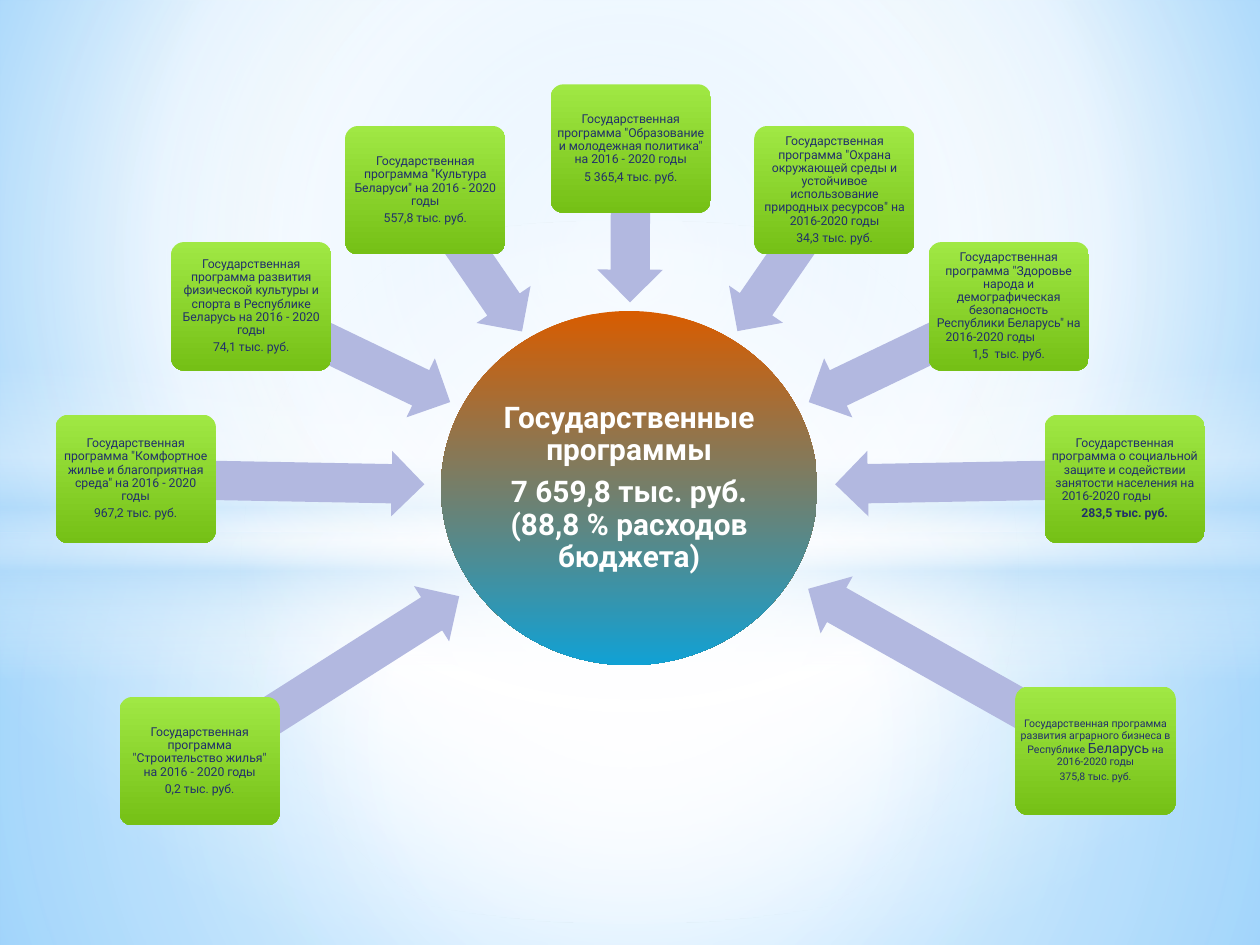
import math
from lxml import etree
from pptx import Presentation
from pptx import util as u
from pptx.dml import color
from pptx.enum import shapes, text
from pptx.oxml import ns

Cm, Pt = u.Cm, u.Pt
HUE = {
    "white": "FFFFFF", "sky": "9ED5FF", "deep": "5BB9FF", "haze": "B4DCFA",
    "rust": "D85C00", "sea": "11A1D4", "lime": "A0E844", "leaf": "75C016",
    "lilac": "B2B8E0", "navy": "21306A",
}
MID = (50, 50, 50, 50)


def blend(fill, root, stops, focus=None):
    fill.gradient()
    grad = root.find(".//" + ns.qn("a:gradFill"))
    for kid in list(grad):
        grad.remove(kid)
    band = etree.SubElement(grad, ns.qn("a:gsLst"))
    for pos, hue, alpha in stops:
        stop = etree.SubElement(band, ns.qn("a:gs"), {"pos": str(pos * 1000)})
        tint = etree.SubElement(stop, ns.qn("a:srgbClr"), {"val": HUE[hue]})
        if alpha < 100:
            etree.SubElement(tint, ns.qn("a:alpha"), {"val": str(alpha * 1000)})
    if focus:
        ring = etree.SubElement(grad, ns.qn("a:path"), {"path": "circle"})
        sides = {side: str(val * 1000) for side, val in zip("ltrb", focus)}
        etree.SubElement(ring, ns.qn("a:fillToRect"), sides)
    else:
        etree.SubElement(grad, ns.qn("a:lin"), {"ang": "5400000", "scaled": "0"})


def draw(kind, x, y, w, h, stops, focus=None, words=(), size=7, hue="navy", bold=(False, False)):
    form = slide.shapes.add_shape(kind, Cm(x), Cm(y), Cm(w), Cm(h))
    form.shadow.inherit = False
    form.line.fill.background()
    blend(form.fill, form._element, stops, focus)
    frame = form.text_frame
    frame.vertical_anchor = text.MSO_ANCHOR.MIDDLE
    frame.margin_left = frame.margin_right = frame.margin_top = frame.margin_bottom = Cm(0.03)
    for i, line in enumerate(words):
        para = frame.add_paragraph() if i else frame.paragraphs[0]
        para.alignment = text.PP_ALIGN.CENTER
        para.line_spacing = 0.9
        para.space_after = Pt(round(size * 0.35, 2))
        para.font.name, para.font.size, para.font.bold = "Roboto", Pt(size), bold[i]
        para.font.color.rgb = color.RGBColor.from_string(HUE[hue])
        for j, part in enumerate(line.split("|")):
            run = para.add_run()
            run.text = part
            if j == 1:
                run.font.size = Pt(8)
    return form


deck = Presentation()
deck.slide_width, deck.slide_height = Cm(25.4), Cm(19.05)
slide = deck.slides.add_slide(deck.slide_layouts[6])
blend(slide.background.fill, slide._element,
      [(0, "sky", 100), (60, "white", 100), (100, "deep", 100)], (20, 10, 20, 60))

RECT, OVAL = shapes.MSO_SHAPE.RECTANGLE, shapes.MSO_SHAPE.OVAL
draw(RECT, 0, 10.74, 25.4, 8.31, [(0, "white", 91), (37, "white", 76), (100, "haze", 79)], MID)
draw(RECT, 0, 0, 25.4, 10.74, [(0, "white", 89), (48, "white", 62), (100, "haze", 79)], MID)
draw(RECT, 0, 7.37, 25.4, 6.35, [(0, "white", 0), (29, "white", 30), (45, "haze", 40),
                                 (55, "white", 26), (65, "haze", 60), (100, "white", 0)])
draw(OVAL, 0, 4.45, 25.4, 14.17, [(0, "white", 100), (54, "white", 0)], MID)

left, top, wide, high = 8.89, 6.27, 7.59, 7.14
draw(OVAL, left, top, wide, high, [(0, "rust", 100), (100, "sea", 100)],
     words=("Государственные программы", "7 659,8 тыс. руб. (88,8 % расходов бюджета)"),
     size=17, hue="white", bold=(True, True))
hub_x, hub_y = left + wide / 2, top + high / 2

items = [
    (2.41, 14.05, 6.2, 'Государственная программа "Строительство жилья" на 2016 - 2020 годы',
     "0,2 тыс. руб.", 7, False),
    (1.12, 8.36, 5.82, 'Государственная программа "Комфортное жилье и благоприятная среда" на 2016 - 2020 годы',
     "967,2 тыс. руб.", 7, False),
    (3.45, 4.88, 4.45, "Государственная программа развития физической культуры и спорта "
     "в Республике Беларусь на 2016 - 2020 годы", "74,1 тыс. руб.", 7, False),
    (6.96, 2.54, 3.45, 'Государственная программа "Культура Беларуси" на 2016 - 2020 годы',
     "557,8 тыс. руб.", 7, False),
    (11.1, 1.7, 3.1, 'Государственная программа "Образование и молодежная политика" на 2016 - 2020 годы',
     "5 365,4 тыс. руб.", 7, False),
    (15.21, 2.54, 3.45, 'Государственная программа "Охрана окружающей среды и устойчивое '
     'использование природных ресурсов" на 2016-2020 годы', "34,3 тыс. руб.", 7, False),
    (18.72, 4.88, 4.47, 'Государственная программа "Здоровье народа и демографическая '
     'безопасность Республики Беларусь" на 2016-2020 годы\t', "1,5  тыс. руб.", 7, False),
    (21.06, 8.36, 5.84, "Государственная программа о социальной защите и содействии "
     "занятости населения на 2016-2020 годы\t", "283,5 тыс. руб.", 7, True),
    (20.47, 13.84, 6.65, "Государственная программа развития аграрного бизнеса "
     "в Республике |Беларусь| на 2016-2020 годы", "375,8 тыс. руб.", 6, False),
]
box_w, box_h, thick = 3.23, 2.59, 1.32
for x, y, span, name, cost, size, bold in items:
    tail_x, tail_y = x + box_w / 2, y + box_h / 2
    turn = math.atan2(hub_y - tail_y, hub_x - tail_x)
    mid_x = tail_x + span / 2 * math.cos(turn)
    mid_y = tail_y + span / 2 * math.sin(turn)
    arrow = slide.shapes.add_shape(shapes.MSO_SHAPE.LEFT_ARROW, Cm(mid_x - span / 2),
                                   Cm(mid_y - thick / 2), Cm(span), Cm(thick))
    arrow.rotation = (math.degrees(turn) + 180) % 360
    arrow.adjustments[0], arrow.adjustments[1] = 0.6, 0.5
    arrow.shadow.inherit = False
    arrow.line.fill.background()
    arrow.fill.solid()
    arrow.fill.fore_color.rgb = color.RGBColor.from_string(HUE["lilac"])
    box = draw(shapes.MSO_SHAPE.ROUNDED_RECTANGLE, x, y, box_w, box_h,
               [(0, "lime", 100), (100, "leaf", 100)],
               words=(name, cost), size=size, bold=(False, bold))
    box.adjustments[0] = 0.1

deck.save("out.pptx")
